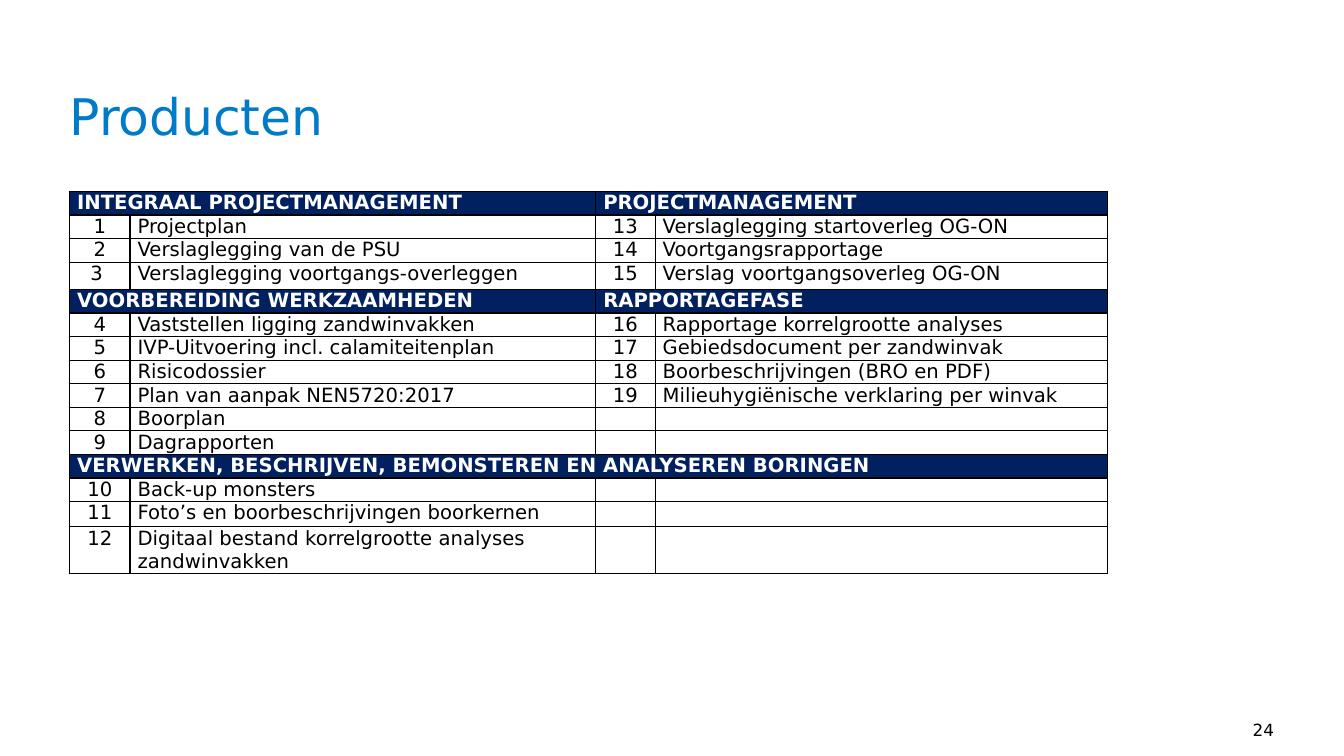
import dataclasses

import lxml.etree
import pptx
import pptx.dml.color
import pptx.enum.text
import pptx.oxml.ns
import pptx.util

NAVY = pptx.dml.color.RGBColor(0x00, 0x20, 0x60)
BLUE = pptx.dml.color.RGBColor(0x00, 0x7B, 0xC7)
BLACK = pptx.dml.color.RGBColor(0x00, 0x00, 0x00)
WHITE = pptx.dml.color.RGBColor(0xFF, 0xFF, 0xFF)
FONT = "DejaVu Sans"
TABLE_SIZE = 14
LEFT = pptx.enum.text.PP_ALIGN.LEFT
CENTER = pptx.enum.text.PP_ALIGN.CENTER
RIGHT = pptx.enum.text.PP_ALIGN.RIGHT
TOP = pptx.enum.text.MSO_ANCHOR.TOP
BOTTOM = pptx.enum.text.MSO_ANCHOR.BOTTOM

GRID_COLUMNS, GRID_ROWS = 133.33, 75
GRID_UNIT = pptx.util.Inches(0.1)
LEFT_MARGIN = 6.9
COLUMN_WIDTHS = (6, 46.2, 5.9, 44.9)
REGULAR_ROW = 2.32
SPECIAL_ROWS = {3: 2.7, 13: 2.5, 14: 4.6}
ROW_HEIGHTS = [SPECIAL_ROWS.get(row, REGULAR_ROW) for row in range(15)]


@dataclasses.dataclass(frozen=True)
class Area:
    left: float
    top: float
    width: float
    height: float


@dataclasses.dataclass(frozen=True)
class Section:
    heading: str
    row: int
    column: int
    products: tuple[tuple[str, str], ...]
    span: int = 2


SECTIONS = (
    Section("INTEGRAAL PROJECTMANAGEMENT", 0, 0, (
        ("1", "Projectplan"),
        ("2", "Verslaglegging van de PSU"),
        ("3 ", "Verslaglegging voortgangs-overleggen"),
    )),
    Section("PROJECTMANAGEMENT", 0, 2, (
        ("13", "Verslaglegging startoverleg OG-ON"),
        ("14", "Voortgangsrapportage"),
        ("15", "Verslag voortgangsoverleg OG-ON"),
    )),
    Section("VOORBEREIDING WERKZAAMHEDEN", 4, 0, (
        ("4", "Vaststellen ligging zandwinvakken"),
        ("5", "IVP-Uitvoering incl. calamiteitenplan"),
        ("6", "Risicodossier"),
        ("7", "Plan van aanpak NEN5720:2017"),
        ("8", "Boorplan"),
        ("9", "Dagrapporten"),
    )),
    Section("RAPPORTAGEFASE", 4, 2, (
        ("16", "Rapportage korrelgrootte analyses"),
        ("17", "Gebiedsdocument per zandwinvak"),
        ("18", "Boorbeschrijvingen (BRO en PDF)"),
        ("19", "Milieuhygiënische verklaring per winvak"),
    )),
    Section("VERWERKEN, BESCHRIJVEN, BEMONSTEREN EN ANALYSEREN BORINGEN", 11, 0, (
        ("10", "Back-up monsters"),
        ("11", "Foto’s en boorbeschrijvingen boorkernen"),
        ("12", "Digitaal bestand korrelgrootte analyses zandwinvakken"),
    ), span=4),
)


def grid(units: float) -> int:
    return round(units * GRID_UNIT)


def write_text(frame, text: str, *, size: float = TABLE_SIZE, color=BLACK,
               bold: bool = False, align=LEFT, line_spacing: float = 1.0) -> None:
    paragraph = frame.paragraphs[0]
    paragraph.alignment = align
    paragraph.line_spacing = line_spacing
    run = paragraph.add_run()
    run.text = text
    run.font.name = FONT
    run.font.size = pptx.util.Pt(size)
    run.font.bold = bold
    run.font.color.rgb = color


def add_text_box(slide, area: Area, text: str, *, anchor=TOP, **text_format) -> None:
    shape = slide.shapes.add_textbox(
        grid(area.left), grid(area.top), grid(area.width), grid(area.height))
    frame = shape.text_frame
    frame.word_wrap = True
    frame.vertical_anchor = anchor
    frame.margin_left = frame.margin_right = 0
    frame.margin_top = frame.margin_bottom = 0
    write_text(frame, text, **text_format)


def prepare_cell(cell) -> None:
    cell.margin_left = cell.margin_right = grid(0.75)
    cell.margin_top = cell.margin_bottom = 0
    qualified = pptx.oxml.ns.qn
    properties = cell._tc.get_or_add_tcPr()
    for side in ("a:lnL", "a:lnR", "a:lnT", "a:lnB"):
        border = lxml.etree.SubElement(
            properties, qualified(side), w=str(pptx.util.Pt(1)))
        fill = lxml.etree.SubElement(border, qualified("a:solidFill"))
        lxml.etree.SubElement(fill, qualified("a:srgbClr"), val=str(BLACK))
    cell.fill.background()
    if not cell.text_frame.text:
        lxml.etree.SubElement(
            cell.text_frame.paragraphs[0]._p, qualified("a:endParaRPr"),
            sz=str(TABLE_SIZE * 100))


def fill_section(table, section: Section) -> None:
    heading = table.cell(section.row, section.column)
    heading.merge(table.cell(section.row, section.column + section.span - 1))
    heading.fill.solid()
    heading.fill.fore_color.rgb = NAVY
    write_text(heading.text_frame, section.heading, color=WHITE, bold=True)
    for row, (number, product) in enumerate(section.products, section.row + 1):
        write_text(table.cell(row, section.column).text_frame, number, align=CENTER)
        write_text(table.cell(row, section.column + 1).text_frame, product)


def add_product_table(slide) -> None:
    table = slide.shapes.add_table(
        len(ROW_HEIGHTS), len(COLUMN_WIDTHS), grid(LEFT_MARGIN), grid(19),
        grid(sum(COLUMN_WIDTHS)), grid(sum(ROW_HEIGHTS))).table
    table.first_row = table.horz_banding = False
    for column, width in zip(table.columns, COLUMN_WIDTHS):
        column.width = grid(width)
    for row, height in zip(table.rows, ROW_HEIGHTS):
        row.height = grid(height)
    for cell in table.iter_cells():
        prepare_cell(cell)
    for section in SECTIONS:
        fill_section(table, section)


def main() -> None:
    presentation = pptx.Presentation()
    presentation.slide_width = grid(GRID_COLUMNS)
    presentation.slide_height = grid(GRID_ROWS)
    slide = presentation.slides.add_slide(presentation.slide_layouts[6])
    add_text_box(slide, Area(120.8, 71.4, 5.6, 2), "24",
                 size=12, align=RIGHT, anchor=BOTTOM)
    add_text_box(slide, Area(LEFT_MARGIN, 9.1, 119.6, 11.7), "Producten",
                 size=36, color=BLUE, line_spacing=0.9)
    add_product_table(slide)
    presentation.save("out.pptx")


if __name__ == "__main__":
    main()
